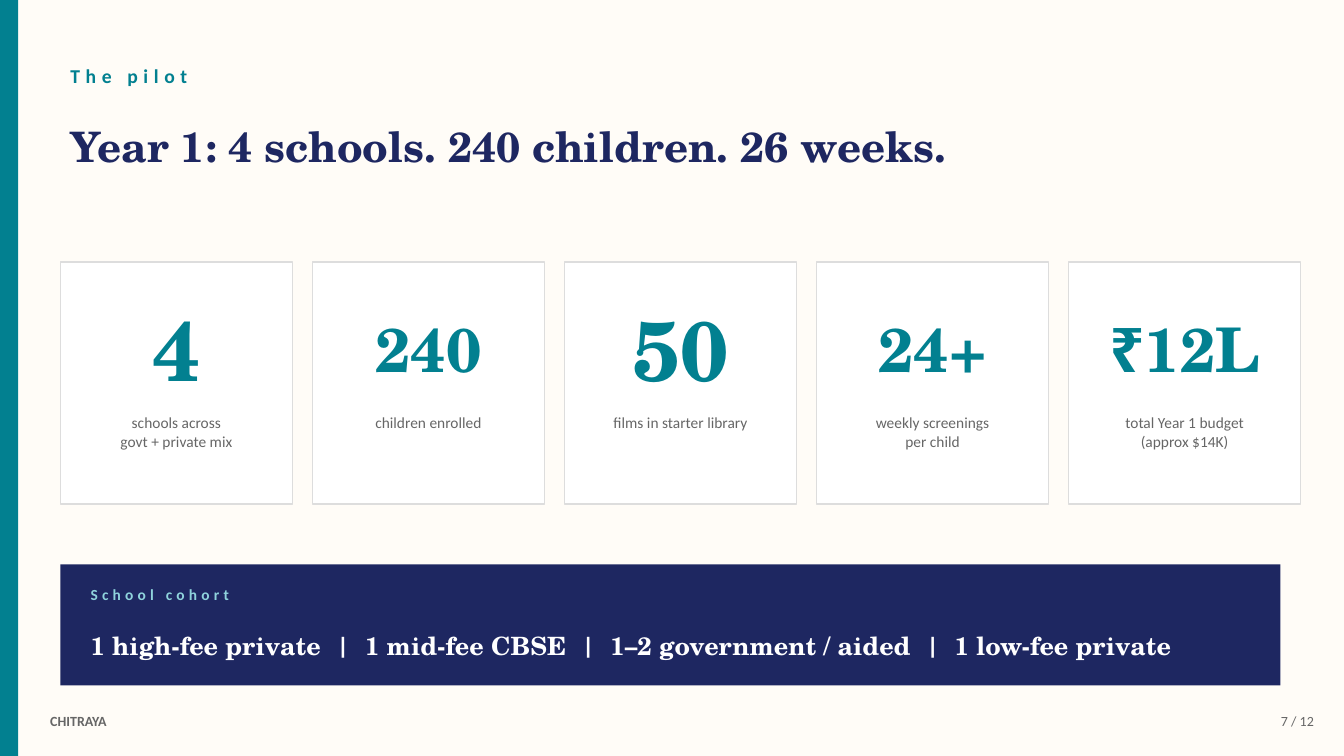
"""Build the pilot slide: five key figures above the school cohort band."""
from dataclasses import dataclass
from typing import Optional

from pptx import Presentation
from pptx.dml.color import RGBColor
from pptx.enum.shapes import MSO_SHAPE
from pptx.enum.text import MSO_ANCHOR, MSO_AUTO_SIZE, PP_ALIGN
from pptx.util import Emu, Pt

RECT = MSO_SHAPE.RECTANGLE
TOP, MIDDLE = MSO_ANCHOR.TOP, MSO_ANCHOR.MIDDLE
LEFT, CENTER, RIGHT = PP_ALIGN.LEFT, PP_ALIGN.CENTER, PP_ALIGN.RIGHT
NO_FIT = MSO_AUTO_SIZE.NONE

SCALE = 9144
SANS, SERIF = "Calibri", "TeX Gyre Schola"

CREAM = RGBColor(0xFF, 0xFC, 0xF7)
TEAL = RGBColor(0x02, 0x80, 0x90)
NAVY = RGBColor(0x1E, 0x27, 0x61)
WHITE = RGBColor(0xFF, 0xFF, 0xFF)
SILVER = RGBColor(0xDD, 0xDD, 0xDD)
GRAY = RGBColor(0x66, 0x66, 0x66)
AQUA = RGBColor(0x8F, 0xD3, 0xDC)


@dataclass(frozen=True)
class Box:
    """Place and size in px."""
    left: int
    top: int
    width: int
    height: int

    def emu(self) -> tuple[Emu, ...]:
        """Return the box in EMU."""
        sides = (self.left, self.top, self.width, self.height)
        return tuple(Emu(side * SCALE) for side in sides)


@dataclass(frozen=True)
class Style:
    """Look of a text."""
    size: int
    color: RGBColor
    font: str = SANS
    bold: bool = True
    align: PP_ALIGN = LEFT
    anchor: MSO_ANCHOR = MIDDLE
    track: int = 0


@dataclass(frozen=True)
class Label:
    """Text in its box."""
    box: Box
    text: str
    style: Style


@dataclass(frozen=True)
class Fact:
    """Key figure with its caption."""
    value: str
    note: str
    size: int = 44


FACTS = (
    Fact("4", "schools across\ngovt + private mix", 60),
    Fact("240", "children enrolled"),
    Fact("50", "films in starter library", 60),
    Fact("24+", "weekly screenings\nper child"),
    Fact("₹12L", "total Year 1 budget\n(approx $14K)"),
)
COHORT = ("1 high-fee private", "1 mid-fee CBSE",
          "1–2 government / aided", "1 low-fee private")

TITLE = Label(Box(60, 100, 1200, 90),
              "Year 1: 4 schools. 240 children. 26 weeks.",
              Style(30, NAVY, SERIF))
LABELS = (
    Label(Box(60, 50, 600, 50), "The pilot", Style(14, TEAL, track=4)),
    Label(Box(80, 570, 400, 40), "School cohort", Style(11, AQUA, track=3)),
    Label(Box(80, 605, 1200, 70), "  |  ".join(COHORT),
          Style(18, WHITE, SERIF)),
    Label(Box(1213, 700, 100, 30), "7 / 12",
          Style(10, GRAY, bold=False, align=RIGHT)),
    Label(Box(40, 700, 200, 30), "CHITRAYA", Style(10, GRAY)),
)
NOTE = Style(11, GRAY, bold=False, align=CENTER, anchor=TOP)
START, STEP = 60, 250


def write(shape, label: Label) -> None:
    """Place a shape and fill it with styled text."""
    style = label.style
    shape.left, shape.top, shape.width, shape.height = label.box.emu()
    frame = shape.text_frame
    frame.text = label.text
    frame.word_wrap = True
    frame.auto_size = NO_FIT
    frame.vertical_anchor = style.anchor
    for para in frame.paragraphs:
        para.alignment = style.align
        for run in para.runs:
            font = run.font
            font.name, font.size = style.font, Pt(style.size)
            font.bold = style.bold
            font.color.rgb = style.color
            if style.track:
                run._r.get_or_add_rPr().set("spc", str(style.track * 100))


def add_text(slide, label: Label) -> None:
    """Add a text box."""
    write(slide.shapes.add_textbox(*label.box.emu()), label)


def add_rect(slide, box: Box, fill: RGBColor,
             edge: Optional[RGBColor] = None) -> None:
    """Add a plain rectangle with an optional outline."""
    rect = slide.shapes.add_shape(RECT, *box.emu())
    rect.shadow.inherit = False
    rect.fill.solid()
    rect.fill.fore_color.rgb = fill
    if edge is None:
        rect.line.fill.background()
    else:
        rect.line.color.rgb = edge
        rect.line.width = Pt(1)


def add_card(slide, left: int, fact: Fact) -> None:
    """Add a card with a key figure."""
    add_rect(slide, Box(left, 260, 230, 240), WHITE, SILVER)
    figure = Style(fact.size, TEAL, SERIF, align=CENTER)
    add_text(slide, Label(Box(left, 285, 230, 120), fact.value, figure))
    add_text(slide, Label(Box(left + 15, 405, 200, 90), fact.note, NOTE))


def main() -> None:
    """Build and save the slide."""
    deck = Presentation()
    deck.slide_width, deck.slide_height = Emu(1333 * SCALE), Emu(750 * SCALE)
    slide = deck.slides.add_slide(deck.slide_layouts[5])
    slide.background.fill.solid()
    slide.background.fill.fore_color.rgb = CREAM

    write(slide.shapes.title, TITLE)
    add_rect(slide, Box(0, 0, 18, 750), TEAL)
    for index, fact in enumerate(FACTS):
        add_card(slide, START + index * STEP, fact)
    add_rect(slide, Box(60, 560, 1210, 120), NAVY)
    for label in LABELS:
        add_text(slide, label)
    deck.save("out.pptx")


if __name__ == "__main__":
    main()
